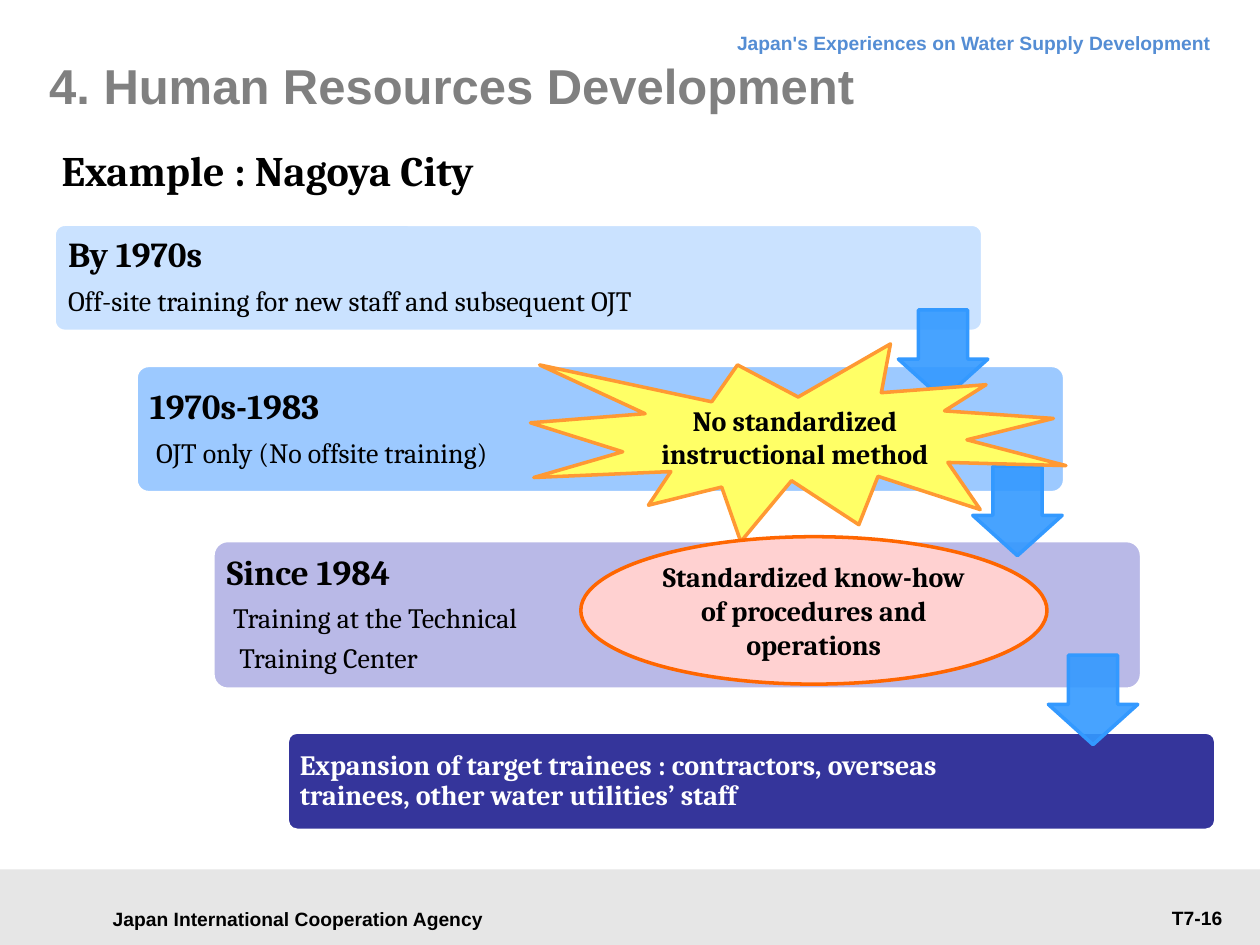
"""Builds the Nagoya City human resources development slide on a grid of 100 columns by 75 rows."""
from dataclasses import dataclass
from typing import NamedTuple

from pptx import Presentation
from pptx.dml.color import RGBColor
from pptx.enum.shapes import MSO_SHAPE
from pptx.enum.text import MSO_ANCHOR, PP_ALIGN
from pptx.oxml.ns import qn
from pptx.util import Inches, Pt
from lxml.etree import SubElement

COLS, ROWS = 100, 75


@dataclass(frozen=True)
class Theme:
    """Colours, fonts and type sizes of the slide."""
    sans: str = "Arial"
    serif: str = "Cambria"
    black: str = "000000"
    white: str = "FFFFFF"
    title: str = "808080"
    header: str = "548DD4"
    footer: str = "E6E6E6"
    arrow: str = "3399FF"
    small: int = 11
    body: int = 16
    heading: int = 20
    example: int = 24
    headline: int = 28
    line: int = 2


class Box(NamedTuple):
    """A place in grid columns and rows."""
    x: float
    y: float
    w: float
    h: float


class Line(NamedTuple):
    """One paragraph and its look."""
    text: str
    size: int
    bold: bool = True
    color: str = "000000"
    font: str = "Cambria"
    align: PP_ALIGN = PP_ALIGN.LEFT
    indent: float = 0
    spacing: object = None
    after: float = 0


class Step(NamedTuple):
    """One bar of the staircase with its text."""
    box: Box
    fill: str
    text_width: float
    inset: float
    lines: list


class Callout(NamedTuple):
    """An outlined shape with centred text."""
    kind: MSO_SHAPE
    box: Box
    fill: str
    line: str
    text: str


T = Theme()
STEP_W, ARROW = 73.7, 7.1


def place(prs, box: Box) -> tuple:
    """Turn grid units into slide lengths."""
    cw, rh = prs.slide_width / COLS, prs.slide_height / ROWS
    return tuple(round(v) for v in (box.x * cw, box.y * rh, box.w * cw, box.h * rh))


def write(tf, lines: list, anchor=MSO_ANCHOR.MIDDLE, insets=(0.1, 0.05, 0.1, 0.05)) -> None:
    """Fill a text frame with styled paragraphs."""
    tf.word_wrap = True
    tf.vertical_anchor = anchor
    tf.margin_left, tf.margin_top, tf.margin_right, tf.margin_bottom = map(Inches, insets)
    for i, line in enumerate(lines):
        p = tf.paragraphs[0] if i == 0 else tf.add_paragraph()
        p.text = line.text
        p.alignment = line.align
        p.line_spacing = line.spacing
        p.space_after = Pt(line.after)
        if line.indent:
            p._p.get_or_add_pPr().set("marL", str(Inches(line.indent)))
        p.font.name, p.font.size, p.font.bold = line.font, Pt(line.size), line.bold
        p.font.color.rgb = RGBColor.from_string(line.color)


def add_text(prs, s, box: Box, lines: list, **options) -> None:
    """Add a text box."""
    write(s.shapes.add_textbox(*place(prs, box)).text_frame, lines, **options)


def add_shape(prs, s, kind: MSO_SHAPE, box: Box, fill: str, line: str = "",
              adjust: tuple = (), alpha: int = 100):
    """Add a flat preset shape."""
    sp = s.shapes.add_shape(kind, *place(prs, box))
    sp.shadow.inherit = False
    for i, value in enumerate(adjust):
        sp.adjustments[i] = value
    sp.fill.solid()
    sp.fill.fore_color.rgb = RGBColor.from_string(fill)
    if alpha < 100:
        clr = sp._element.spPr.find(qn("a:solidFill"))[0]
        SubElement(clr, qn("a:alpha")).set("val", str(alpha * 1000))
    if line:
        sp.line.color.rgb = RGBColor.from_string(line)
        sp.line.width = Pt(T.line)
    else:
        sp.line.fill.background()
    return sp


def add_step(prs, s, step: Step) -> None:
    """Add a bar and the text on it."""
    b = step.box
    add_shape(prs, s, MSO_SHAPE.ROUNDED_RECTANGLE, b, step.fill, T.white, (0.1,))
    inner = Box(b.x + 0.3, b.y + 0.3, step.text_width, b.h - 0.6)
    add_text(prs, s, inner, step.lines, insets=(step.inset,) * 4)


def add_callout(prs, s, c: Callout) -> None:
    """Add a callout with its label."""
    sp = add_shape(prs, s, c.kind, c.box, c.fill, c.line)
    write(sp.text_frame, [Line(c.text, T.body, align=PP_ALIGN.CENTER)])


def head(text: str) -> Line:
    """Heading of a step."""
    return Line(text, T.heading, spacing=0.9, after=7)


def detail(text: str, indent: float = 0) -> Line:
    """Body line of a step."""
    return Line(text, T.body, False, indent=indent, spacing=0.9, after=5.6)


def label(text: str, align: PP_ALIGN, color: str = T.black, spacing=None) -> Line:
    """Small header or footer line."""
    return Line(text, T.small, color=color, font=T.sans, align=align, spacing=spacing)


STEPS = [
    Step(Box(4.3, 17.8, STEP_W, 8.5), "CAE2FF", 61.2, 0.08,
         [head("By 1970s"), detail("Off-site training for new staff and subsequent OJT")]),
    Step(Box(10.8, 29, STEP_W, 10.1), "9CC9FF", 59.8, 0.08,
         [head("1970s-1983"), detail("OJT only (No offsite training)", 0.05)]),
    Step(Box(16.9, 42.9, STEP_W, 11.8), "B9B9E7", 59.8, 0.08,
         [head("Since 1984"), detail("Training at the Technical", 0.05),
          detail("Training Center", 0.1)]),
    Step(Box(22.8, 58.1, STEP_W, 7.8), "35359B", 60, 0.07,
         [Line("Expansion of target trainees : contractors, overseas trainees, "
               "other water utilities’ staff", T.body, color=T.white, spacing=0.9, after=5.6)]),
]
ARROWS = [(71.3, 24.6), (77.2, 37), (83.2, 52)]
CALLOUTS = [
    Callout(MSO_SHAPE.EXPLOSION1, Box(42.1, 27.3, 42.5, 15.7), "FFFF66", "FF9933",
            "No standardized instructional method"),
    Callout(MSO_SHAPE.OVAL, Box(46.1, 42.6, 37, 11.7), "FFD1D1", "FF6600",
            "Standardized know-how of procedures and operations"),
]


def main() -> None:
    """Build and save the slide."""
    prs = Presentation()
    prs.slide_width, prs.slide_height = Inches(10), Inches(7.5)
    s = prs.slides.add_slide(prs.slide_layouts[6])
    add_shape(prs, s, MSO_SHAPE.RECTANGLE, Box(0, 69, COLS, 6), T.footer)
    add_text(prs, s, Box(7.1, 71.2, 33.1, 3.4),
             [label("Japan International Cooperation Agency", PP_ALIGN.CENTER)])
    add_text(prs, s, Box(27.2, 1.3, 69.9, 3.8),
             [label("Japan's Experiences on Water Supply Development", PP_ALIGN.RIGHT,
                    T.header, Pt(18))], anchor=MSO_ANCHOR.TOP)
    add_text(prs, s, Box(82.3, 71.4, 15.7, 2.9), [label("T7-16", PP_ALIGN.RIGHT)],
             anchor=MSO_ANCHOR.TOP)
    add_text(prs, s, Box(3.9, 2.8, 89.8, 7.9),
             [Line("4. Human Resources Development", T.headline, color=T.title, font=T.sans)],
             insets=(0, 0, 0, 0))
    for step in STEPS:
        add_step(prs, s, step)
    for x, y in ARROWS:
        add_shape(prs, s, MSO_SHAPE.DOWN_ARROW, Box(x, y, ARROW, ARROW), T.arrow, T.arrow,
                  (0.55, 0.45), alpha=90)
    for callout in CALLOUTS:
        add_callout(prs, s, callout)
    add_text(prs, s, Box(3.9, 11, 42.1, 4.5),
             [Line("Example : Nagoya City", T.example, spacing=Pt(32))],
             anchor=MSO_ANCHOR.TOP, insets=(0.1, 0, 0, 0))
    prs.save("out.pptx")


if __name__ == "__main__":
    main()
